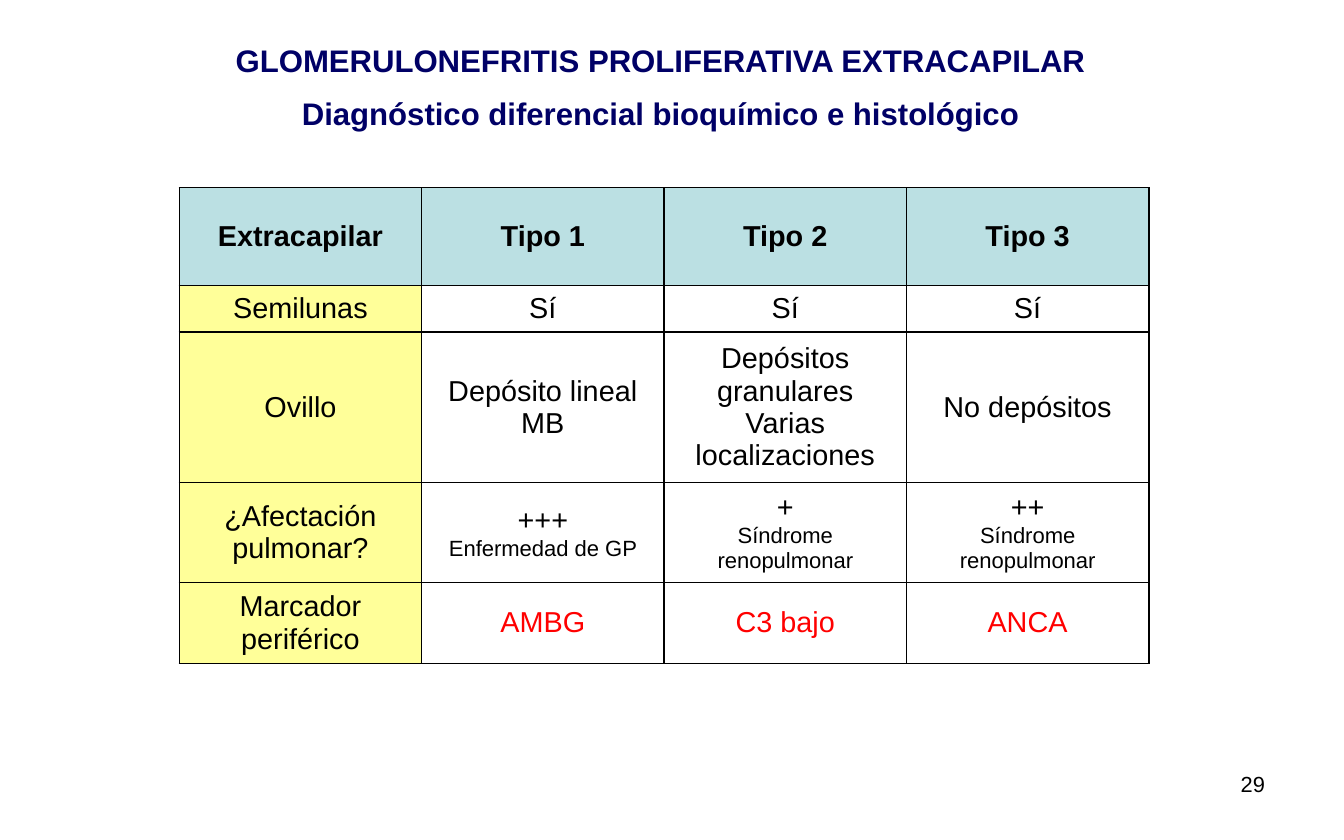
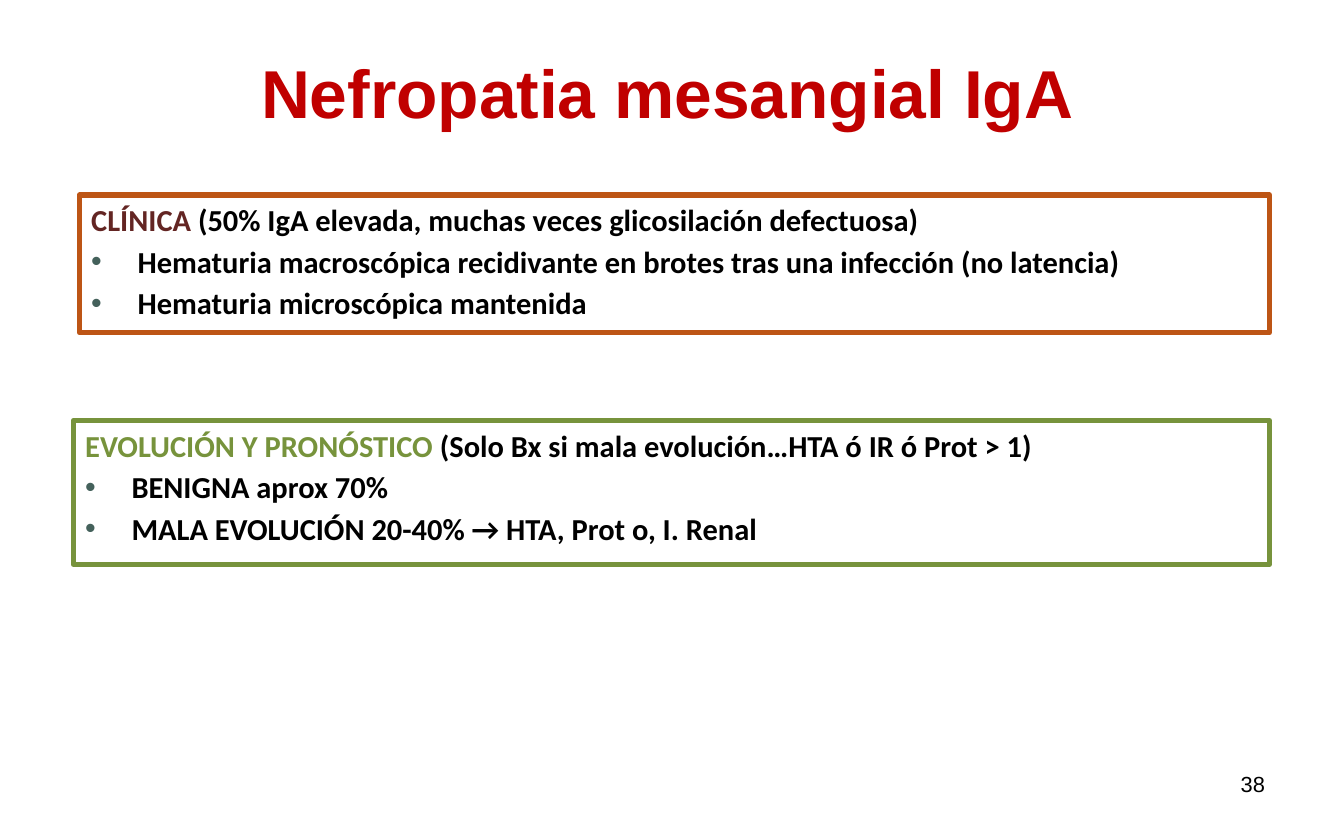
from dataclasses import dataclass
from pptx import Presentation
from pptx.dml.color import RGBColor as RGB
from pptx.enum.shapes import MSO_SHAPE as Shape
from pptx.enum.text import MSO_ANCHOR as Anchor, MSO_AUTO_SIZE as Fit, PP_ALIGN as Align
from pptx.oxml import parse_xml
from pptx.oxml.ns import nsdecls
from pptx.util import Inches, Pt


@dataclass(frozen=True)
class Look:
    size: float
    color: str = "000000"
    bold: bool = False
    font: str = "Arial"


class Theme:
    head_fill = "BBE0E3"
    side_fill = "FFFF99"
    cell_fill = "FFFFFF"
    border = "000000"
    bullet = "44615B"
    orange = "BD5515"
    green = "77933C"
    topic = Look(18.4, "000066", True)
    title = Look(40, "C00000", True)
    number = Look(12.9)
    head = Look(17, bold=True)
    cell = Look(17)
    small = Look(13)
    mark = Look(17, "FF0000")
    body = Look(18, bold=True, font="Calibri")
    brown = Look(18, "632523", True, "Calibri")
    leaf = Look(18, green, True, "Calibri")


class Deck:
    def __init__(self, wide, high):
        self.file = Presentation()
        self.file.slide_width = Inches(wide)
        self.file.slide_height = Inches(high)
        self.slide = None

    def page(self, number):
        self.slide = self.file.slides.add_slide(self.file.slide_layouts[5])
        box = self.slide.shapes.add_textbox(*map(Inches, (7.9, 6.27, 2.57, 0.48)))
        box.text_frame.word_wrap = True
        self.put(box.text_frame, [[(number, Theme.number)]], Align.RIGHT)

    def put(self, frame, paras, align, gap=0, indent=0):
        for i, runs in enumerate(paras):
            para = frame.add_paragraph() if i else frame.paragraphs[0]
            para.alignment = align
            para.space_before = Pt(gap if i else 0)
            if i and indent:
                self.bullet(para, indent)
            for text, look in runs:
                run = para.add_run()
                run.text = text
                font = run.font
                font.name, font.size, font.bold = look.font, Pt(look.size), look.bold
                font.color.rgb = RGB.from_string(look.color)

    def bullet(self, para, indent):
        props = para._p.get_or_add_pPr()
        props.set("marL", str(Inches(indent)))
        props.set("indent", str(-Inches(indent)))
        for part in (
            f'<a:buClr {nsdecls("a")}><a:srgbClr val="{Theme.bullet}"/></a:buClr>',
            f'<a:buFont {nsdecls("a")} typeface="Arial"/>',
            f'<a:buChar {nsdecls("a")} char="•"/>',
        ):
            props.append(parse_xml(part))

    def title(self, area, lines, look, align, gap=0):
        shape = self.slide.shapes.title
        shape.left, shape.top, shape.width, shape.height = map(Inches, area)
        frame = shape.text_frame
        frame.word_wrap = True
        frame.auto_size = Fit.NONE
        frame.vertical_anchor = Anchor.TOP
        self.put(frame, [[(line, look)] for line in lines], align, gap)

    def panel(self, area, color, paras):
        shape = self.slide.shapes.add_shape(Shape.RECTANGLE, *map(Inches, area))
        shape.shadow.inherit = False
        shape.fill.background()
        shape.line.color.rgb = RGB.from_string(color)
        shape.line.width = Pt(3)
        frame = shape.text_frame
        frame.word_wrap = True
        frame.vertical_anchor = Anchor.TOP
        self.put(frame, paras, Align.LEFT, gap=3, indent=0.38)

    def table(self, left, top, width, highs, rows):
        cols = len(rows[0])
        area = map(Inches, (left, top, width, sum(highs)))
        table = self.slide.shapes.add_table(len(rows), cols, *area).table
        table.first_row = table.horz_banding = False
        for col in table.columns:
            col.width = Inches(width / cols)
        for r, (high, row) in enumerate(zip(highs, rows)):
            table.rows[r].height = Inches(high)
            for c, paras in enumerate(row):
                fill = Theme.side_fill if c == 0 else Theme.cell_fill
                self.cell(table.cell(r, c), paras, fill if r else Theme.head_fill)

    def cell(self, cell, paras, fill):
        cell.vertical_anchor = Anchor.MIDDLE
        cell.margin_left = cell.margin_right = Inches(0.09)
        cell.margin_top = cell.margin_bottom = Inches(0.05)
        props = cell._tc.get_or_add_tcPr()
        for side in "LRTB":
            props.append(parse_xml(
                f'<a:ln{side} {nsdecls("a")} w="{Pt(1)}"><a:solidFill>'
                f'<a:srgbClr val="{Theme.border}"/></a:solidFill></a:ln{side}>'))
        cell.fill.solid()
        cell.fill.fore_color.rgb = RGB.from_string(fill)
        self.put(cell.text_frame, [[para] for para in paras], Align.CENTER)


def line(look, *texts):
    return [[(text, look)] for text in texts]


def lung(sign, note):
    return [(sign, Theme.cell), (note, Theme.small)]


def types(deck):
    deck.page("29")
    deck.title((1.77, 0.29, 7.29, 0.87), [
        "GLOMERULONEFRITIS PROLIFERATIVA EXTRACAPILAR",
        "Diagnóstico diferencial bioquímico e histológico",
    ], Theme.topic, Align.CENTER, gap=9.2)
    plain = Theme.cell
    deck.table(1.47, 1.54, 7.95, [0.8, 0.37, 1.2, 0.76, 0.65], [
        line(Theme.head, "Extracapilar", "Tipo 1", "Tipo 2", "Tipo 3"),
        line(plain, "Semilunas", "Sí", "Sí", "Sí"),
        line(plain, "Ovillo", "Depósito lineal MB")
        + [[("Depósitos granulares", plain), ("Varias localizaciones", plain)]]
        + line(plain, "No depósitos"),
        line(plain, "¿Afectación pulmonar?") + [
            lung("+++", "Enfermedad de GP"),
            lung("+", "Síndrome renopulmonar"),
            lung("++", "Síndrome renopulmonar"),
        ],
        line(plain, "Marcador periférico")
        + line(Theme.mark, "AMBG", "C3 bajo", "ANCA"),
    ])


def iga(deck):
    deck.page("38")
    deck.title((2.04, 0.37, 6.94, 0.77), ["Nefropatia mesangial IgA"],
               Theme.title, Align.LEFT)
    body = Theme.body
    deck.panel((0.65, 1.6, 9.76, 1.13), Theme.orange, [
        [("CLÍNICA", Theme.brown),
         (" (50% IgA elevada, muchas veces glicosilación defectuosa)", body)],
        *line(body,
              "Hematuria macroscópica recidivante en brotes tras una infección (no latencia)",
              "Hematuria microscópica mantenida"),
    ])
    deck.panel((0.6, 3.45, 9.81, 1.18), Theme.green, [
        [("EVOLUCIÓN Y PRONÓSTICO ", Theme.leaf),
         ("(Solo Bx si mala evolución…HTA ó IR ó Prot > 1)", body)],
        *line(body, "BENIGNA aprox 70%",
              "MALA EVOLUCIÓN 20-40% → HTA, Prot o, I. Renal"),
    ])


def main():
    deck = Deck(11.02, 6.89)
    types(deck)
    iga(deck)
    deck.file.save("out.pptx")


if __name__ == "__main__":
    main()
